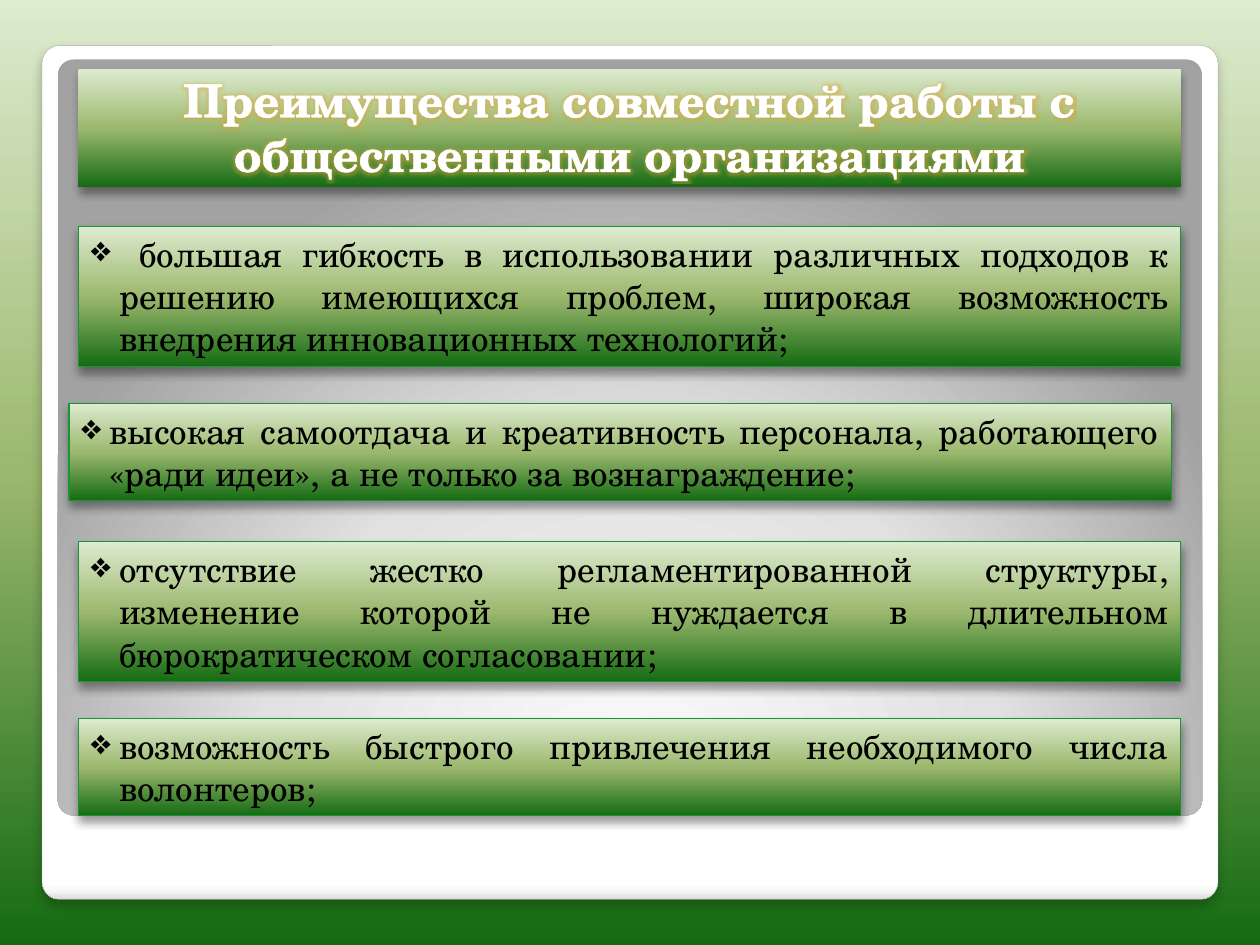
import pptx
import pptx.dml.color
import pptx.enum.shapes
import pptx.enum.text
import pptx.oxml
import pptx.oxml.ns
import pptx.util

Pt = pptx.util.Pt
RGBColor = pptx.dml.color.RGBColor
SHAPE = pptx.enum.shapes.MSO_SHAPE
ALIGN = pptx.enum.text.PP_ALIGN
ANCHOR = pptx.enum.text.MSO_ANCHOR
FIT = pptx.enum.text.MSO_AUTO_SIZE
qn = pptx.oxml.ns.qn
NS = pptx.oxml.ns.nsdecls("a")

WHITE = RGBColor(0xFF, 0xFF, 0xFF)
BLACK = RGBColor(0, 0, 0)
SILVER = RGBColor(0xE1, 0xE1, 0xE1)
GRAY = RGBColor(0xA2, 0xA2, 0xA2)
FRAME_LINE = RGBColor(0xA4, 0xA4, 0xA4)
BOX_LINE = RGBColor(0x15, 0x97, 0x37)
GLOW = RGBColor(0xE0, 0xA0, 0x30)

GREENS = [(0, RGBColor(0xDD, 0xEB, 0xCF)), (50, RGBColor(0x9C, 0xB8, 0x6E)),
          (100, RGBColor(0x15, 0x6B, 0x13))]
FRAME_STOPS = [(0, WHITE), (98, WHITE), (99, RGBColor(0xF7, 0xF7, 0xF7)),
               (100, RGBColor(0xDA, 0xDA, 0xDA))]
PANEL_STOPS = [(0, WHITE), (55, SILVER), (100, GRAY)]
DOWN = '<a:lin ang="5400000" scaled="0"/>'
CIRCLE = ('<a:path path="circle"><a:fillToRect l="50000" t="175000" '
          'r="50000" b="-75000"/></a:path>')

FONT = "TeX Gyre Schola"
LEFT, WIDTH = 44.8, 630
INDENT = 16.2

TITLE = "Преимущества совместной работы с общественными организациями"
# left, top, height, text
BOXES = [
    (LEFT, 309.6, 80, "отсутствие жестко регламентированной структуры, изменение "
     "которой не нуждается в длительном бюрократическом согласовании;"),
    (39.4, 230.6, 55.6, "высокая самоотдача и креативность персонала, работающего "
     "«ради идеи», а не только за вознаграждение;"),
    (LEFT, 129.4, 80, " большая гибкость в использовании различных подходов к "
     "решению имеющихся проблем, широкая возможность внедрения "
     "инновационных технологий;"),
    (LEFT, 410.6, 55.6, "возможность быстрого привлечения необходимого числа "
     "волонтеров;"),
]


def xml(text):
    return pptx.oxml.parse_xml(text)


def set_gradient(fill, parent, stops, direction=DOWN):
    """Put a multi-stop gradient in place of the fill held by parent."""
    fill.solid()
    gs = "".join(f'<a:gs pos="{pos * 1000}"><a:srgbClr val="{color}"/></a:gs>'
                 for pos, color in stops)
    grad = xml(f'<a:gradFill {NS} rotWithShape="1"><a:gsLst>{gs}</a:gsLst>'
               f'{direction}</a:gradFill>')
    parent.replace(parent.find(qn("a:solidFill")), grad)


def set_shadow(sp, alpha=40, blur=5.2, dist=3):
    sp.shadow.inherit = False
    effects = sp._element.spPr.find(qn("a:effectLst"))
    effects.append(xml(
        f'<a:outerShdw {NS} blurRad="{Pt(blur)}" dist="{Pt(dist)}" dir="5400000" '
        f'algn="t" rotWithShape="0"><a:srgbClr val="{BLACK}">'
        f'<a:alpha val="{alpha * 1000}"/></a:srgbClr></a:outerShdw>'))


def add_panel(s, kind, box, stops, direction=DOWN):
    sp = s.shapes.add_shape(kind, *(Pt(v) for v in box))
    sp.shadow.inherit = False
    sp.line.fill.background()
    set_gradient(sp.fill, sp._element.spPr, stops, direction)
    return sp


def set_line(sp, color, width):
    sp.line.color.rgb = color
    sp.line.width = Pt(width)


def format_text(p, size, color, align):
    p.alignment = align
    p.font.name = FONT
    p.font.size = Pt(size)
    p.font.color.rgb = color


def add_frame(s):
    frame = add_panel(s, SHAPE.ROUNDED_RECTANGLE, (24, 26, 672, 488), FRAME_STOPS)
    set_line(frame, FRAME_LINE, 0.16)
    set_shadow(frame, 25, 6, 4)
    panel = add_panel(s, SHAPE.ROUNDED_RECTANGLE, (33, 34, 654, 432),
                      PANEL_STOPS, CIRCLE)
    for sp in (frame, panel):
        sp.adjustments[0] = 0.021


def add_title(s):
    sp = s.shapes.title
    s.shapes._spTree.append(sp._element)  # bring in front of the frame
    sp.left, sp.top, sp.width, sp.height = Pt(LEFT), Pt(39.4), Pt(WIDTH), Pt(67.6)
    set_gradient(sp.fill, sp._element.spPr, GREENS)
    set_shadow(sp)
    tf = sp.text_frame
    tf.auto_size = FIT.NONE
    tf.vertical_anchor = ANCHOR.BOTTOM
    p = tf.paragraphs[0]
    r = p.add_run()
    r.text = TITLE
    format_text(p, 26, WHITE, ALIGN.CENTER)
    p.line_spacing = 1.0
    p.font.bold = True
    # Outline and glow of the letters
    rPr = r.font._element
    rPr.append(xml(f'<a:ln {NS} w="{Pt(0.75)}"><a:solidFill>'
                   f'<a:srgbClr val="{WHITE}"/></a:solidFill></a:ln>'))
    rPr.append(xml(f'<a:solidFill {NS}><a:srgbClr val="{WHITE}"/></a:solidFill>'))
    rPr.append(xml(f'<a:effectLst {NS}><a:glow rad="{Pt(3.6)}"><a:srgbClr val="{GLOW}">'
                   '<a:alpha val="40000"/></a:srgbClr></a:glow></a:effectLst>'))


def add_bullet_box(s, left, top, height, text):
    sp = add_panel(s, SHAPE.RECTANGLE, (left, top, WIDTH, height), GREENS)
    set_line(sp, BOX_LINE, 0.75)
    set_shadow(sp)
    tf = sp.text_frame
    tf.word_wrap = True
    tf.auto_size = FIT.SHAPE_TO_FIT_TEXT
    tf.vertical_anchor = ANCHOR.TOP
    p = tf.paragraphs[0]
    p.text = text
    format_text(p, 20, BLACK, ALIGN.JUSTIFY)
    pPr = p._p.get_or_add_pPr()
    pPr.set("marL", str(Pt(INDENT)))
    pPr.set("indent", str(-Pt(INDENT)))
    pPr.insert(0, xml(f'<a:buChar {NS} char="❖"/>'))


def main():
    prs = pptx.Presentation()
    prs.slide_width, prs.slide_height = Pt(720), Pt(540)
    s = prs.slides.add_slide(prs.slide_layouts[5])

    # Background
    fill = s.background.fill
    fill.solid()
    set_gradient(fill, s._element.find(".//" + qn("p:bgPr")), GREENS)

    # Frame, title and list of advantages
    add_frame(s)
    add_title(s)
    for box in BOXES:
        add_bullet_box(s, *box)

    prs.save("out.pptx")


if __name__ == "__main__":
    main()
